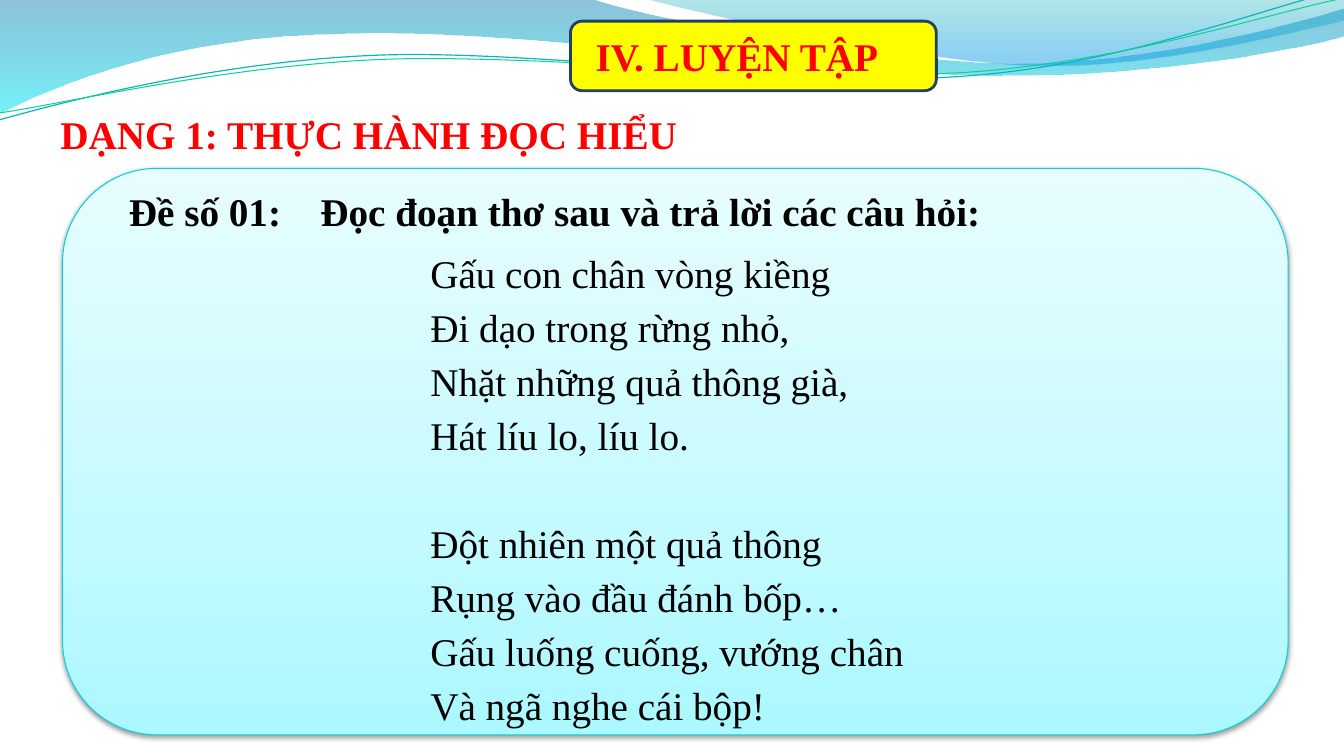
"""Build the practice slide with a bear poem on a wavy background."""
from dataclasses import dataclass
from math import cos, radians, sin
from typing import Optional

from lxml.etree import SubElement
from pptx import Presentation
from pptx.dml.color import RGBColor
from pptx.enum.shapes import MSO_SHAPE
from pptx.enum.text import MSO_ANCHOR, MSO_AUTO_SIZE, PP_ALIGN
from pptx.oxml import parse_xml
from pptx.oxml.ns import nsdecls, qn
from pptx.util import Emu, Inches, Pt


@dataclass(frozen=True)
class Theme:
    font: str = "Times New Roman"
    text_size: float = 28
    heading: str = "FF0000"
    body: str = "000000"
    banner: str = "FFFF00"
    banner_line: str = "243F60"
    card_line: str = "06D0D9"
    card_stops: tuple = ((0, "ABF8FF", 100), (35, "C3FAFF", 100), (100, "E8FDFF", 100))
    wide_wave_stops: tuple = ((0, "0079AD", 45), (100, "00E9F7", 55))
    corner_wave_stops: tuple = ((0, "00ABB4", 30), (80, "0099E4", 45), (100, "0099E4", 45))
    teal_line: str = "09B6BE"
    green_line: str = "10CF9B"


@dataclass(frozen=True)
class Wave:
    start: tuple
    segments: tuple
    stops: tuple = ()
    line: Optional[str] = None
    width: float = 0
    tilt: float = 0
    center: tuple = (0, 0)


@dataclass(frozen=True)
class Panel:
    box: tuple
    line: str
    width: float
    fill: Optional[str] = None
    stops: tuple = ()
    shadow: bool = False


@dataclass(frozen=True)
class Label:
    box: tuple
    text: str
    color: str
    bold: bool = True
    align: PP_ALIGN = PP_ALIGN.LEFT
    line_spacing: float = 1.0
    space_after: float = 0
    indent: float = 0
    tab: float = 0


THEME = Theme()

WAVES = (
    Wave((0, 0), (
        (5.87, -0.01),
        (6.34, 0.17, 8.85, 0.63, 10.11, 0.63),
        (11.38, 0.63, 12.78, 0.26, 13.33, 0.09),
        (13.35, 0.36),
        (13.11, 0.44, 11.6, 0.76, 9.94, 0.75),
        (8.29, 0.75, 5.09, 0.28, 3.43, 0.34),
        (1.72, 0.36, 0.61, 0.83, -0.01, 1.13),
        (0, 0),
    ), stops=THEME.wide_wave_stops),
    Wave((6.39, -0.01), (
        (6.79, 0.11, 9.09, 0.62, 10.25, 0.65),
        (11.41, 0.69, 12.82, 0.32, 13.33, 0.21),
        (13.33, 0),
        (6.39, -0.01),
    ), stops=THEME.corner_wave_stops),
    Wave((-0.01, 1.19), (
        (0.64, 1.01, 2.11, 0.62, 3.69, 0.55),
        (5.27, 0.48, 7.9, 0.87, 9.5, 0.76),
        (11.1, 0.66, 12.52, 0.08, 13.31, -0.1),
    ), line=THEME.teal_line, width=0.85, tilt=357.3, center=(6.65, 0.57)),
    Wave((0, 1.12), (
        (0.63, 1.03, 2.18, 0.66, 3.78, 0.59),
        (5.37, 0.53, 7.96, 0.82, 9.55, 0.72),
        (11.15, 0.62, 12.55, 0.14, 13.34, -0.02),
    ), line=THEME.green_line, width=0.75, tilt=357.3, center=(6.67, 0.59)),
)

PANELS = (
    Panel((5.66, 0.21, 3.63, 0.69), THEME.banner_line, 2, fill=THEME.banner),
    Panel((0.62, 1.67, 12.16, 5.62), THEME.card_line, 0.75,
          stops=THEME.card_stops, shadow=True),
)

TITLE = Label((5.81, 0.27, 3.34, 0.57), "IV. LUYỆN TẬP", THEME.heading)

LABELS = (
    Label((0.5, 0.98, 6.69, 0.61), "DẠNG 1: THỰC HÀNH ĐỌC HIỂU", THEME.heading,
          align=PP_ALIGN.JUSTIFY, line_spacing=1.15, space_after=10),
    Label((1.18, 1.74, 9.25, 0.61),
          "Đề số 01:\tĐọc đoạn thơ sau và trả lời các câu hỏi:", THEME.body,
          align=PP_ALIGN.JUSTIFY, line_spacing=1.15, space_after=10, tab=1.9),
    Label((3.17, 2.35, 6.69, 6.03),
          "Gấu con chân vòng kiềng\vĐi dạo trong rừng nhỏ,\v"
          "Nhặt những quả thông già,\vHát líu lo, líu lo.\v\v"
          "Đột nhiên một quả thông\vRụng vào đầu đánh bốp…\v"
          "Gấu luống cuống, vướng chân\vVà ngã nghe cái bộp!",
          THEME.body, bold=False, line_spacing=1.15, space_after=15, indent=1),
)


def apply_format(target, values: dict) -> None:
    for name, value in values.items():
        setattr(target, name, value)


def fill_gradient(shape, stops: tuple, angle: int) -> None:
    shape.fill.background()
    stop_xml = "".join(
        f'<a:gs pos="{position * 1000}"><a:srgbClr val="{color}">'
        f'<a:alpha val="{opacity * 1000}"/></a:srgbClr></a:gs>'
        for position, color, opacity in stops)
    gradient = parse_xml(
        f'<a:gradFill {nsdecls("a")} rotWithShape="1"><a:gsLst>{stop_xml}</a:gsLst>'
        f'<a:lin ang="{angle * 60000}" scaled="0"/></a:gradFill>')
    properties = shape.element.spPr
    properties.replace(properties.find(qn("a:noFill")), gradient)


def set_line(shape, color: Optional[str], width: float) -> None:
    if color is None:
        shape.line.fill.background()
        return
    shape.line.color.rgb = RGBColor.from_string(color)
    shape.line.width = Pt(width)


def level_point(wave: Wave, x: float, y: float) -> tuple:
    turn = radians(-wave.tilt)
    center_x, center_y = wave.center
    across, down = x - center_x, y - center_y
    return (Inches(center_x + across * cos(turn) - down * sin(turn)),
            Inches(center_y + across * sin(turn) + down * cos(turn)))


def bend_segments(shape, segments: tuple) -> None:
    outline = next(shape.element.iter(qn("a:lnTo"))).getparent()
    corners = iter(outline.findall(qn("a:lnTo")))
    for segment in segments:
        corner = next(corners)
        if len(segment) == 2:
            continue
        curve = SubElement(outline, qn("a:cubicBezTo"))
        outline.replace(corner, curve)
        curve.append(corner[0])
        for _ in range(2):
            control = next(corners)
            curve.append(control[0])
            outline.remove(control)


def draw_wave(slide, wave: Wave) -> None:
    numbers = [*wave.start, *(number for segment in wave.segments for number in segment)]
    first, *rest = [level_point(wave, x, y) for x, y in zip(numbers[::2], numbers[1::2])]
    builder = slide.shapes.build_freeform(*first)
    builder.add_line_segments(rest, close=bool(wave.stops))
    shape = builder.convert_to_shape()
    bend_segments(shape, wave.segments)
    shape.rotation = wave.tilt
    shape.shadow.inherit = False
    if wave.stops:
        fill_gradient(shape, wave.stops, 90)
    else:
        shape.fill.background()
    set_line(shape, wave.line, wave.width)


def draw_panel(slide, panel: Panel) -> None:
    shape = slide.shapes.add_shape(MSO_SHAPE.ROUNDED_RECTANGLE, *map(Inches, panel.box))
    shape.shadow.inherit = False
    if panel.stops:
        fill_gradient(shape, panel.stops, 270)
    else:
        shape.fill.solid()
        shape.fill.fore_color.rgb = RGBColor.from_string(panel.fill)
    set_line(shape, panel.line, panel.width)
    if panel.shadow:
        shape.element.spPr.find(qn("a:effectLst")).append(parse_xml(
            f'<a:outerShdw {nsdecls("a")} blurRad="{Pt(3.1)}" dist="{Pt(1.6)}" '
            'dir="5400000" rotWithShape="0"><a:srgbClr val="000000">'
            '<a:alpha val="38000"/></a:srgbClr></a:outerShdw>'))


def write_label(shape, label: Label) -> None:
    apply_format(shape, dict(zip(("left", "top", "width", "height"), map(Inches, label.box))))
    frame = shape.text_frame
    apply_format(frame, {"word_wrap": True, "auto_size": MSO_AUTO_SIZE.SHAPE_TO_FIT_TEXT,
                         "vertical_anchor": MSO_ANCHOR.TOP})
    paragraph = frame.paragraphs[0]
    apply_format(paragraph, {
        "text": label.text, "alignment": label.align, "line_spacing": label.line_spacing,
        "space_before": Pt(0), "space_after": Pt(label.space_after)})
    properties = paragraph._p.get_or_add_pPr()
    if label.indent:
        properties.set("marL", str(Inches(label.indent)))
    if label.tab:
        properties.append(parse_xml(
            f'<a:tabLst {nsdecls("a")}><a:tab pos="{Inches(label.tab)}" algn="l"/></a:tabLst>'))
    for font in (paragraph.font, *(run.font for run in paragraph.runs)):
        apply_format(font, {"name": THEME.font, "size": Pt(THEME.text_size), "bold": label.bold})
        font.color.rgb = RGBColor.from_string(label.color)
    for line_break in paragraph._p.findall(qn("a:br")):
        SubElement(line_break, qn("a:rPr")).set("sz", str(int(THEME.text_size * 100)))


def main() -> None:
    presentation = Presentation()
    apply_format(presentation, {"slide_width": Emu(12192000), "slide_height": Inches(7.5)})
    slide = presentation.slides.add_slide(presentation.slide_layouts.get_by_name("Title Only"))
    for wave in WAVES:
        draw_wave(slide, wave)
    for panel in PANELS:
        draw_panel(slide, panel)
    title = slide.shapes.title
    slide.shapes.element.append(title.element)
    write_label(title, TITLE)
    for label in LABELS:
        write_label(slide.shapes.add_textbox(*map(Inches, label.box)), label)
    presentation.save("out.pptx")


if __name__ == "__main__":
    main()
